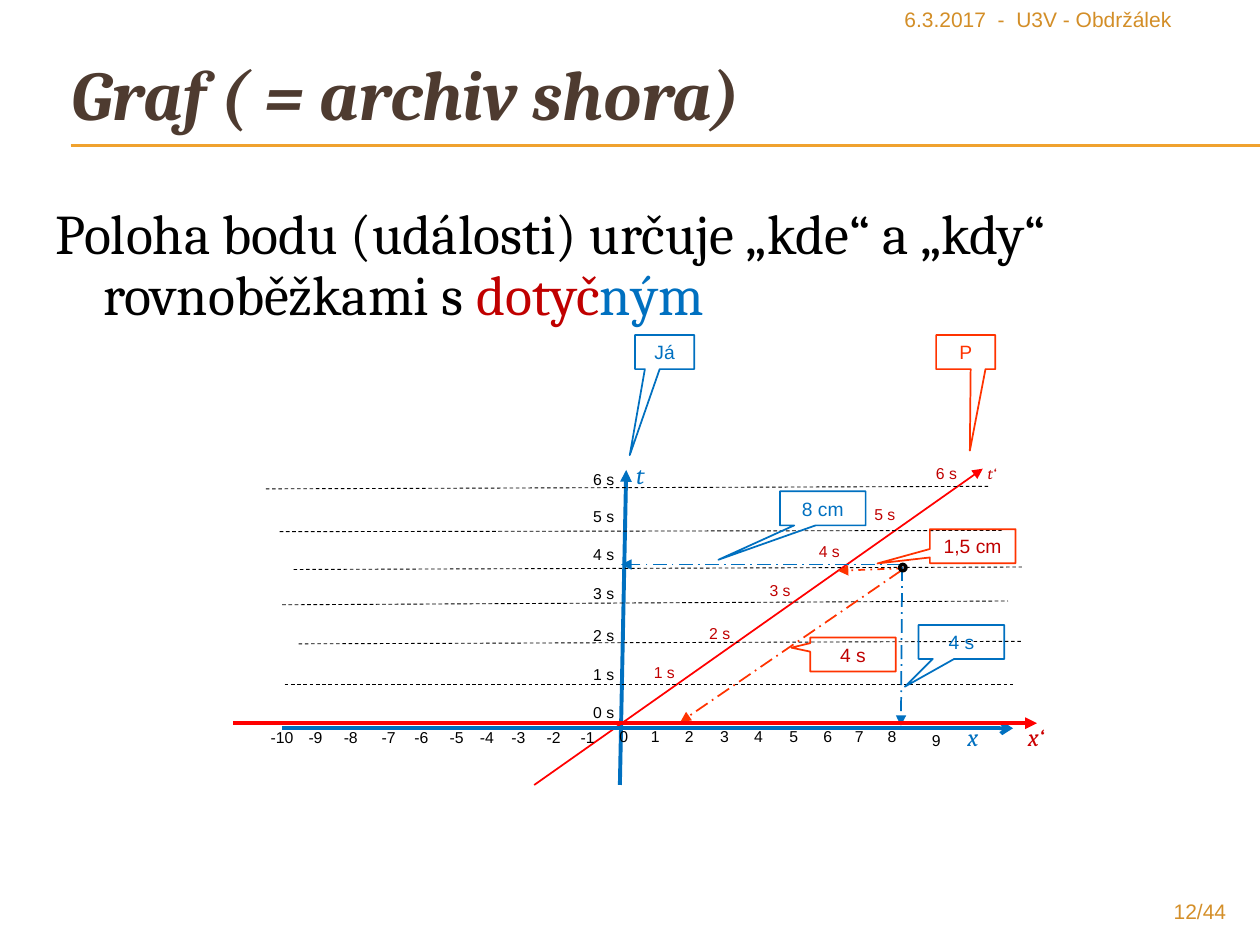
"""Build the slide with a space-time graph read by parallels to two sets of axes."""
import pptx
import pptx.dml.color
import pptx.enum.dml
import pptx.enum.shapes
import pptx.enum.text
import pptx.oxml
import pptx.oxml.ns
import pptx.util

Inches = pptx.util.Inches
Pt = pptx.util.Pt
Align = pptx.enum.text.PP_ALIGN
Anchor = pptx.enum.text.MSO_ANCHOR
Shape = pptx.enum.shapes.MSO_SHAPE
Dash = pptx.enum.dml.MSO_LINE

THEME = {
    "colors": {
        "black": "000000", "gold": "F0A22E", "header": "D38E27", "number": "D48F29",
        "title": "4E3B30", "blue": "0070C0", "red": "FF0000", "orange": "FF3300",
        "dark red": "C00000", "crimson": "CC0000",
    },
    "fonts": {
        "title": {"name": "Cambria", "size": Pt(40), "bold": True, "italic": True},
        "body": {"name": "Cambria", "size": Pt(32)},
        "header": {"name": "Arial", "size": Pt(12)},
        "callout": {"name": "Arial", "size": Pt(11)},
        "label": {"name": "Arial", "size": Pt(9)},
        "axis": {"name": "Cambria", "size": Pt(14), "italic": True},
        "small axis": {"name": "Cambria", "size": Pt(9), "italic": True},
    },
}
COLORS = {name: pptx.dml.color.RGBColor.from_string(value)
          for name, value in THEME["colors"].items()}

presentation = pptx.Presentation()
presentation.slide_width = Inches(10)
presentation.slide_height = Inches(7.5)
slide = presentation.slides.add_slide(presentation.slide_layouts[6])


def write_text(runs, style, box=None, shape=None, frame_format=None, paragraph_format=None):
    if shape is None:
        shape = slide.shapes.add_textbox(*map(Inches, box))
    frame = shape.text_frame
    for name, value in {"word_wrap": True, **(frame_format or {})}.items():
        setattr(frame, name, value)
    paragraph = frame.paragraphs[0]
    for name, value in (paragraph_format or {}).items():
        setattr(paragraph, name, value)
    for text, color in runs:
        run = paragraph.add_run()
        run.text = text
        run.font.color.rgb = COLORS[color]
        for name, value in THEME["fonts"][style].items():
            setattr(run.font, name, value)
    return paragraph


def add_line(start, end, color, width, dash=None, arrow=None):
    line = slide.shapes.add_connector(
        pptx.enum.shapes.MSO_CONNECTOR.STRAIGHT, *map(Inches, start + end))
    line.line.color.rgb = COLORS[color]
    line.line.width = Pt(width)
    if dash:
        line.line.dash_style = dash
    if arrow:
        tail = pptx.oxml.parse_xml(
            f'<a:tailEnd {pptx.oxml.ns.nsdecls("a")} type="{arrow}"/>')
        line.line._get_or_add_ln().append(tail)
    line._element.spPr.append(
        pptx.oxml.parse_xml(f'<a:effectLst {pptx.oxml.ns.nsdecls("a")}/>'))


for rule_y in (1.15, 1.16):
    add_line((0.56, rule_y), (10, rule_y), "gold", 0.75)

body = write_text(
    [("Poloha bodu (události) určuje „kde“ a „kdy“ rovnoběžkami s ", "black"),
     ("dotyč", "dark red"), ("ným", "blue")],
    "body", (0.34, 1.59, 9.49, 5.49),
    paragraph_format={"line_spacing": 0.9, "space_before": Pt(6.4)})
title = write_text(
    [("Graf ( = archiv shora)", "title")], "title", (0.47, 0.43, 5.63, 0.71),
    frame_format={"word_wrap": False},
    paragraph_format={"line_spacing": 0.9, "space_before": Pt(8)})
for paragraph in (body, title):
    properties = paragraph._p.get_or_add_pPr()
    properties.set("marL", str(Inches(0.38)))
    properties.set("indent", str(Inches(-0.38)))

write_text([("6.3.2017  -  U3V - Obdržálek", "header")], "header", (7.08, 0, 2.88, 0.32))
write_text([("12/44", "number")], "header", (9, 7.08, 0.83, 0.27),
           paragraph_format={"alignment": Align.RIGHT})

add_line((4.92, 6.23), (4.97, 3.73), "blue", 2.25, arrow="triangle")
add_line((4.24, 6.23), (7.8, 3.72), "red", 1, arrow="triangle")
add_line((2.24, 5.78), (8.04, 5.78), "blue", 2.25, arrow="arrow")

time_lines = [
    ((2.26, 5.43), (8.06, 5.43)),
    ((2.37, 5.11), (8.11, 5.09)),
    ((2.24, 4.8), (8, 4.77)),
    ((2.33, 4.52), (8.11, 4.5)),
    ((2.22, 4.22), (7.95, 4.21)),
    ((2.11, 3.88), (7.86, 3.86)),
]
for start, end in time_lines:
    add_line(start, end, "black", 0.5, Dash.DASH)

projections = [
    ((7.17, 4.51), (6.65, 4.53), "orange", Dash.DASH_DOT),
    ((7.15, 4.53), (5.4, 5.73), "orange", Dash.LONG_DASH_DOT),
    ((7.15, 4.48), (4.93, 4.48), "blue", Dash.LONG_DASH_DOT),
    ((7.16, 4.5), (7.15, 5.76), "blue", Dash.LONG_DASH_DOT),
]
for start, end, color, dash in projections:
    add_line(start, end, color, 1, dash, "triangle")

for second, top in enumerate((5.53, 5.23, 4.92, 4.58, 4.27, 3.97, 3.68)):
    write_text([(f"{second} s", "black")], "label", (4.61, top, 0.42, 0.25))

moving_times = [(5.09, 5.21), (5.53, 4.9), (6.01, 4.56), (6.4, 4.25), (6.84, 3.96), (7.33, 3.63)]
for second, (left, top) in enumerate(moving_times, start=1):
    write_text([(f"{second} s", "dark red")], "label", (left, top, 0.42, 0.25))

for number, left in enumerate((4.88, 5.13, 5.4, 5.68, 5.95, 6.23, 6.5, 6.75, 7.01, 7.36)):
    write_text([(str(number), "black")], "label",
               (left, 5.75 if number == 9 else 5.72, 0.14, 0.25),
               frame_format={"margin_left": 0, "margin_right": 0, "word_wrap": False},
               paragraph_format={"alignment": Align.CENTER})

for number, left in enumerate((4.51, 4.24, 3.96, 3.71, 3.47, 3.19, 2.93, 2.63, 2.35, 2.05), start=1):
    write_text([(f"-{number}", "black")], "label", (left, 5.73, 0.41, 0.25))

axis_names = [
    ("t", "blue", "axis", 4.95, 3.6),
    ("x", "blue", "axis", 7.58, 5.68),
    ("x‘", "crimson", "axis", 8.06, 5.68),
    ("t‘", "dark red", "small axis", 7.74, 3.63),
]
for text, color, style, left, top in axis_names:
    write_text([(text, color)], style, (left, top, 0.45, 0.34))

event = slide.shapes.add_shape(Shape.OVAL, *map(Inches, (7.14, 4.48, 0.05, 0.05)))
event.shadow.inherit = False
event.fill.background()
event.line.color.rgb = COLORS["black"]
event.line.width = Pt(2)

add_line((1.85, 5.74), (8.23, 5.74), "red", 2.25, arrow="triangle")

callouts = [
    ("Já", 5.04, 2.66, 0.47, (-0.589, 3.028), "blue", "blue"),
    ("P", 7.43, 2.66, 0.47, (0.07, 2.894), "orange", "orange"),
    ("8 cm", 6.19, 3.9, 0.68, (-1.219, 1.511), "blue", "blue"),
    ("4 s", 7.29, 4.96, 0.68, (-0.66, 1.316), "blue", "blue"),
    ("1,5 cm", 7.38, 4.2, 0.68, (-1.111, 0.508), "orange", "dark red"),
    ("4 s", 6.43, 5.06, 0.68, (-0.719, -0.201), "orange", "dark red"),
]
for text, left, top, width, pointer, line_color, text_color in callouts:
    callout = slide.shapes.add_shape(
        Shape.RECTANGULAR_CALLOUT, *map(Inches, (left, top, width, 0.27)))
    callout.shadow.inherit = False
    callout.fill.background()
    callout.line.color.rgb = COLORS[line_color]
    callout.line.width = Pt(1)
    for index, value in enumerate(pointer):
        callout.adjustments[index] = value
    write_text([(text, text_color)], "callout", shape=callout,
               frame_format={"word_wrap": False, "vertical_anchor": Anchor.MIDDLE},
               paragraph_format={"alignment": Align.CENTER})

presentation.save("out.pptx")
